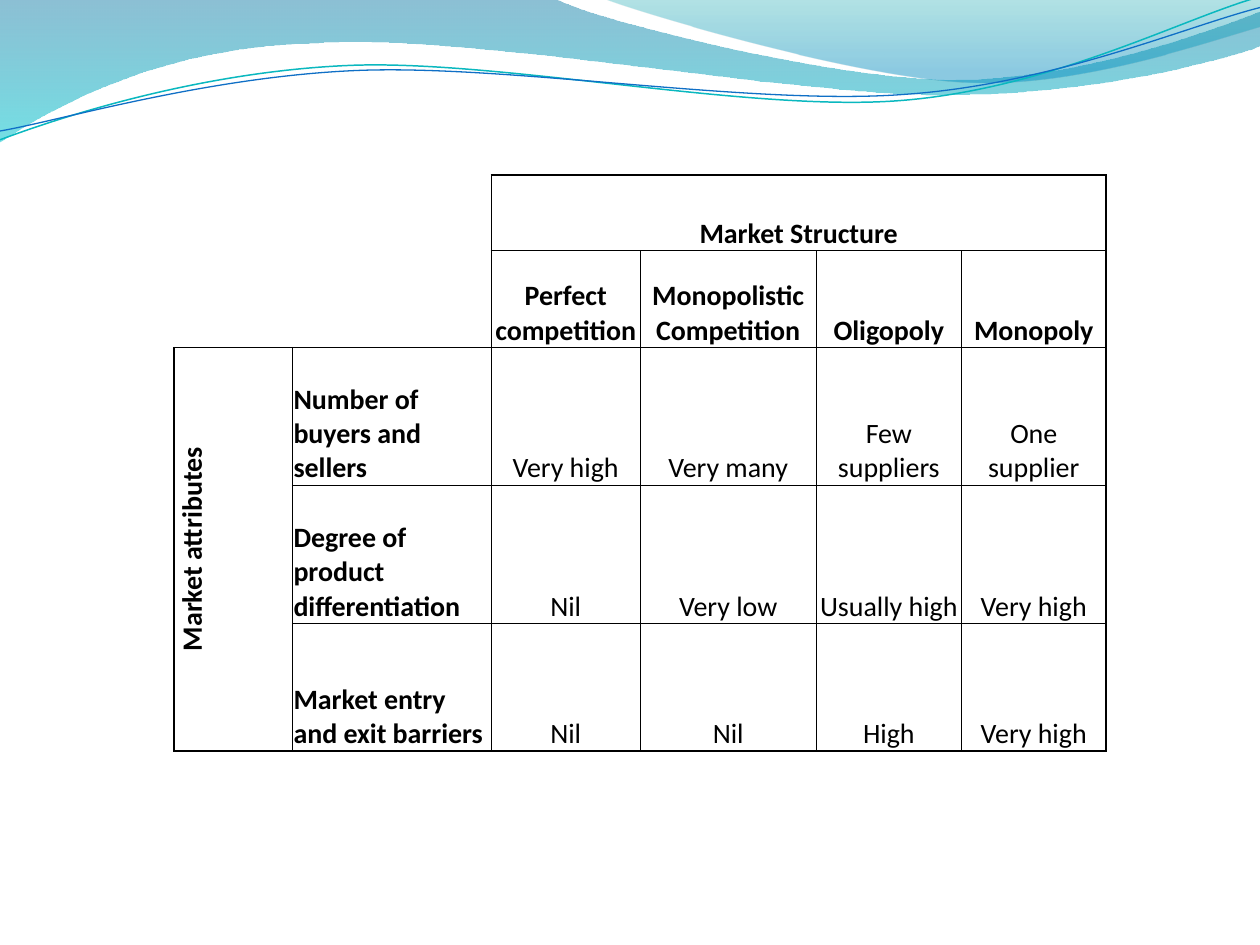
import pptx
import pptx.dml.color
import pptx.enum.text
import pptx.oxml.ns
import pptx.util
from lxml import etree

RGBColor = pptx.dml.color.RGBColor
BLACK = RGBColor(0x00, 0x00, 0x00)
DEEP_TEAL = RGBColor(0x00, 0x74, 0xA1)
AQUA = RGBColor(0x00, 0xC6, 0xCF)
SEA = RGBColor(0x00, 0xA1, 0xA9)
SKY = RGBColor(0x00, 0x8B, 0xBF)
TEAL_LINE = RGBColor(0x0A, 0xB8, 0xBF)
BLUE_LINE = RGBColor(0x0F, 0x6F, 0xC6)

FONT = "Calibri"
TEXT_SIZE = 16
SLIDE_SIZE = (10, 7.5)
TABLE_ORIGIN = (1.38, 1.39)
COLUMN_WIDTHS = [0.94, 1.58, 1.18, 1.4, 1.15, 1.15]
ROW_HEIGHTS = [0.6, 0.77, 1.09, 1.1, 1.01]
HEAD_ROWS = 2
HEAD_COLUMNS = 2
THICK, THIN, NONE = 1, 0.5, 0

MARKET_TABLE = [
    ["", "", "Market Structure", "", "", ""],
    ["", "", "Perfect competition", "Monopolistic Competition", "Oligopoly", "Monopoly"],
    ["Market attributes", "Number of buyers and sellers",
     "Very high", "Very many", "Few suppliers", "One supplier"],
    ["", "Degree of product differentiation", "Nil", "Very low", "Usually high", "Very high"],
    ["", "Market entry and exit barriers", "Nil", "Nil", "High", "Very high"],
]

WAVES = [
    {
        "outline": [
            [(0, 0)], [(4.4, -0.01)],
            [(4.76, 0.17), (6.64, 0.63), (7.58, 0.63)],
            [(8.53, 0.63), (9.58, 0.26), (10, 0.09)],
            [(10.01, 0.36)],
            [(9.83, 0.44), (8.7, 0.76), (7.46, 0.75)],
            [(6.22, 0.75), (3.82, 0.28), (2.57, 0.34)],
            [(1.29, 0.36), (0.46, 0.83), (-0.01, 1.13)],
        ],
        "gradient": [(0, DEEP_TEAL, 45), (1, AQUA, 55)],
    },
    {
        "outline": [
            [(4.79, -0.01)],
            [(5.09, 0.11), (6.82, 0.62), (7.69, 0.65)],
            [(8.56, 0.69), (9.61, 0.32), (10, 0.21)],
            [(10, 0)],
        ],
        "gradient": [(0, SEA, 30), (0.8, SKY, 45)],
    },
    {
        "outline": [
            [(0, 1.11)],
            [(0.48, 0.93), (1.58, 0.57), (2.77, 0.52)],
            [(3.95, 0.47), (5.93, 0.89), (7.13, 0.8)],
            [(8.33, 0.71), (9.38, 0.15), (9.98, -0.02)],
        ],
        "line": (TEAL_LINE, 0.85),
    },
    {
        "outline": [
            [(0, 1.04)],
            [(0.47, 0.96), (1.64, 0.61), (2.83, 0.56)],
            [(4.03, 0.51), (5.97, 0.84), (7.17, 0.75)],
            [(8.36, 0.67), (9.41, 0.21), (10, 0.06)],
        ],
        "line": (BLUE_LINE, 0.75),
    },
]


def bend_segments(wave, segments):
    moves = iter(list(wave.element.spPr.iter(pptx.oxml.ns.qn("a:lnTo"))))
    for segment in segments:
        first, *others = [next(moves) for point in segment]
        if others:
            first.tag = pptx.oxml.ns.qn("a:cubicBezTo")
        for other in others:
            first.append(other[0])
            other.getparent().remove(other)


def add_wave(slide, outline, gradient=None, line=None):
    points = [tuple(map(pptx.util.Inches, point)) for segment in outline for point in segment]
    builder = slide.shapes.build_freeform(*points[0])
    builder.add_line_segments(points[1:], close=gradient is not None)
    wave = builder.convert_to_shape()
    bend_segments(wave, outline[1:])
    wave.shadow.inherit = False
    if gradient:
        wave.fill.gradient()
        wave.fill.gradient_angle = 270
        for stop, (position, color, opacity) in zip(wave.fill.gradient_stops, gradient):
            stop.position = position
            stop.color.rgb = color
        for node, (position, color, opacity) in zip(
            wave.element.spPr.iter(pptx.oxml.ns.qn("a:srgbClr")), gradient
        ):
            etree.SubElement(node, pptx.oxml.ns.qn("a:alpha"), val=str(opacity * 1000))
        wave.line.fill.background()
    else:
        color, width = line
        wave.fill.background()
        wave.line.color.rgb = color
        wave.line.width = pptx.util.Pt(width)


def vertical_edge(row, edge):
    if edge in (HEAD_COLUMNS, len(COLUMN_WIDTHS)):
        return THICK
    if edge < HEAD_COLUMNS and row < HEAD_ROWS:
        return NONE
    return THICK if edge == 0 else THIN


def horizontal_edge(edge, column):
    first = HEAD_ROWS if column < HEAD_COLUMNS else 0
    if edge < first:
        return NONE
    return THICK if edge in (first, len(ROW_HEIGHTS)) else THIN


def set_border(cell, side, width):
    properties = cell._tc.get_or_add_tcPr()
    border = etree.SubElement(
        properties, pptx.oxml.ns.qn("a:ln" + side), w=str(int(pptx.util.Pt(width)))
    )
    if width == NONE:
        etree.SubElement(border, pptx.oxml.ns.qn("a:noFill"))
    else:
        fill = etree.SubElement(border, pptx.oxml.ns.qn("a:solidFill"))
        etree.SubElement(fill, pptx.oxml.ns.qn("a:srgbClr"), val=str(BLACK))


def format_cell(cell, row, column):
    set_border(cell, "L", vertical_edge(row, column))
    set_border(cell, "R", vertical_edge(row, column + cell.span_width))
    set_border(cell, "T", horizontal_edge(row, column))
    set_border(cell, "B", horizontal_edge(row + cell.span_height, column))
    cell.fill.background()
    cell.margin_left = cell.margin_right = cell.margin_top = pptx.util.Inches(0.01)
    cell.margin_bottom = 0
    cell.vertical_anchor = pptx.enum.text.MSO_ANCHOR.BOTTOM
    paragraph = cell.text_frame.paragraphs[0]
    paragraph.text = MARKET_TABLE[row][column]
    align = pptx.enum.text.PP_ALIGN
    paragraph.alignment = align.LEFT if column == 1 else align.CENTER
    for run in paragraph.runs:
        run.font.name = FONT
        run.font.size = pptx.util.Pt(TEXT_SIZE)
        run.font.bold = row < HEAD_ROWS or column < HEAD_COLUMNS
        run.font.color.rgb = BLACK


def add_market_table(slide):
    lengths = (*TABLE_ORIGIN, sum(COLUMN_WIDTHS), sum(ROW_HEIGHTS))
    table = slide.shapes.add_table(
        len(ROW_HEIGHTS), len(COLUMN_WIDTHS), *map(pptx.util.Inches, lengths)
    ).table
    table.first_row = table.horz_banding = False
    for column, width in zip(table.columns, COLUMN_WIDTHS):
        column.width = pptx.util.Inches(width)
    for row, height in zip(table.rows, ROW_HEIGHTS):
        row.height = pptx.util.Inches(height)
    last_row, last_column = len(ROW_HEIGHTS) - 1, len(COLUMN_WIDTHS) - 1
    table.cell(0, HEAD_COLUMNS).merge(table.cell(0, last_column))
    attributes = table.cell(HEAD_ROWS, 0)
    attributes.merge(table.cell(last_row, 0))
    for row in range(len(ROW_HEIGHTS)):
        for column in range(len(COLUMN_WIDTHS)):
            format_cell(table.cell(row, column), row, column)
    attributes._tc.get_or_add_tcPr().set("vert", "vert270")


def main():
    presentation = pptx.Presentation()
    presentation.slide_width, presentation.slide_height = map(pptx.util.Inches, SLIDE_SIZE)
    slide = presentation.slides.add_slide(presentation.slide_layouts[6])
    for wave in WAVES:
        add_wave(slide, **wave)
    add_market_table(slide)
    presentation.save("out.pptx")


if __name__ == "__main__":
    main()
